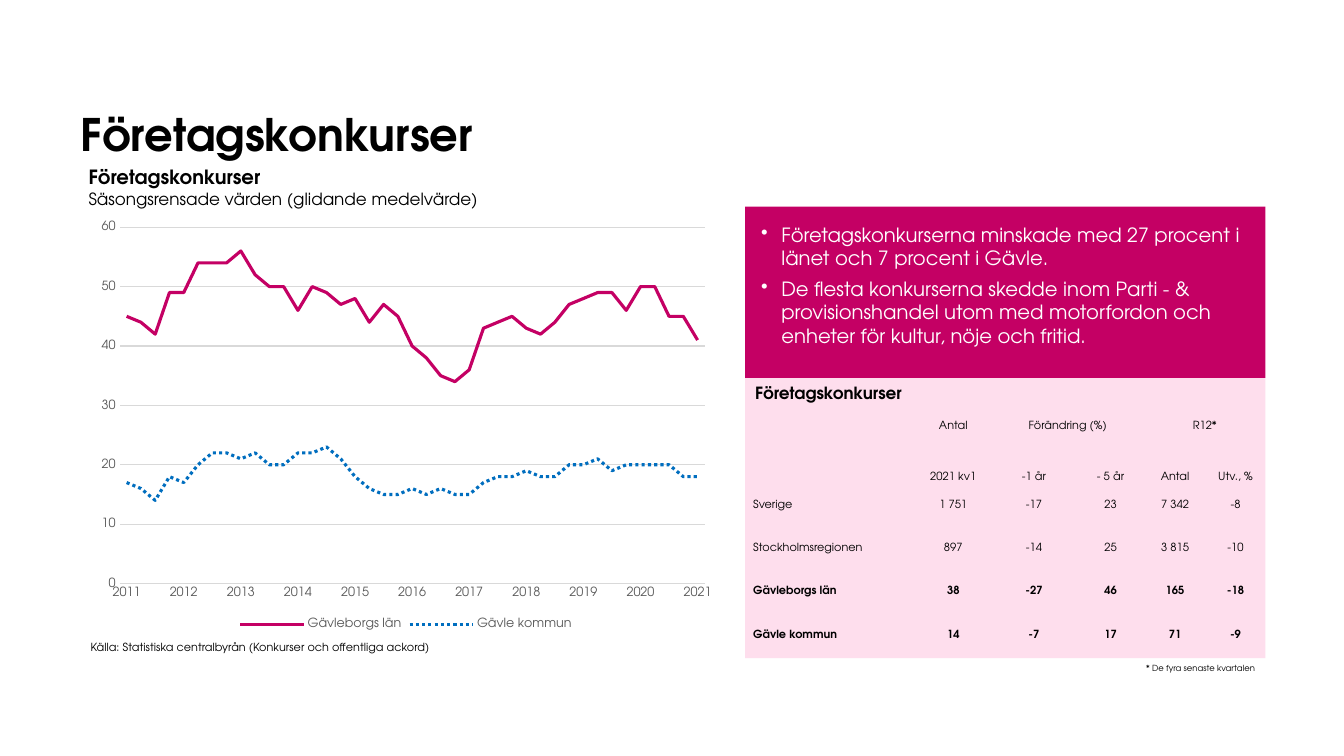
from lxml import etree
from pptx import Presentation
from pptx.chart.data import CategoryChartData
from pptx.dml.color import RGBColor
from pptx.enum.chart import XL_CHART_TYPE as ChartType, XL_LEGEND_POSITION as LegendPos
from pptx.enum.chart import XL_TICK_MARK as TickMark
from pptx.enum.dml import MSO_LINE as Dash
from pptx.enum.shapes import MSO_SHAPE as Shape
from pptx.enum.text import MSO_ANCHOR as Anchor, PP_ALIGN as Align
from pptx.oxml.ns import qn
from pptx.util import Pt

PX = 9144  # 100 px to the inch
FONT = "TeX Gyre Adventor"
COLORS = {"text": "000000", "white": "FFFFFF", "magenta": "C40064", "pink": "FEDEED",
          "blue": "006EBF", "grey": "595959", "grid": "D9D9D9"}
NO_STYLE_TABLE = "{2D5ABB26-0587-4C30-8999-92F81FD0307C}"


def rgb(name):
    return RGBColor.from_string(COLORS[name])


class SlideBuilder:
    def __init__(self, page):
        self.page = page

    def style(self, font, size, color="text", bold=False):
        font.name, font.size, font.bold = FONT, Pt(size), bold
        font.color.rgb = rgb(color)

    def insets(self, target, left, top, right, bottom):
        target.margin_left, target.margin_top = left * PX, top * PX
        target.margin_right, target.margin_bottom = right * PX, bottom * PX

    def text(self, area, lines, wrap=False, margins=(10, 5, 10, 5), anchor=Anchor.TOP):
        """Each line is (wording, size, bold)."""
        frame = self.page.shapes.add_textbox(*(n * PX for n in area)).text_frame
        frame.word_wrap, frame.vertical_anchor = wrap, anchor
        self.insets(frame, *margins)
        for i, (wording, size, bold) in enumerate(lines):
            para = frame.add_paragraph() if i else frame.paragraphs[0]
            para.text = wording
            self.style(para.font, size, bold=bold)

    def panel(self, area, color):
        box = self.page.shapes.add_shape(Shape.RECTANGLE, *(n * PX for n in area))
        box.shadow.inherit = False
        box.fill.solid()
        box.fill.fore_color.rgb = rgb(color)
        box.line.fill.background()
        return box

    def bullets(self, area, color, items, size):
        frame = self.panel(area, color).text_frame
        frame.word_wrap, frame.vertical_anchor = True, Anchor.TOP
        self.insets(frame, 16, 16, 16, 16)
        for i, item in enumerate(items):
            para = frame.add_paragraph() if i else frame.paragraphs[0]
            para.text, para.alignment = item, Align.LEFT
            props = para._p.get_or_add_pPr()
            props.set("marL", str(20 * PX))
            props.set("indent", str(-20 * PX))
            etree.SubElement(props, qn("a:buChar")).set("char", "•")
            if i:
                para.space_before = Pt(5)
            self.style(para.font, size, "white")

    def table(self, area, widths, heights, rows, merges, bold_from, size):
        frame = self.page.shapes.add_table(len(rows), len(widths), *(n * PX for n in area))
        table = frame.table
        table.first_row = table.horz_banding = False
        table._tbl.tblPr.find(qn("a:tableStyleId")).text = NO_STYLE_TABLE
        for column, width in zip(table.columns, widths):
            column.width = width * PX
        for r, (height, row) in enumerate(zip(heights, rows)):
            table.rows[r].height = height * PX
            for c, wording in enumerate(row):
                cell = table.cell(r, c)
                cell.fill.background()
                cell.vertical_anchor = Anchor.BOTTOM if r == 1 else Anchor.MIDDLE
                self.insets(cell, 1 if c else 8, 1, 1, 0)
                para = cell.text_frame.paragraphs[0]
                para.text = wording
                para.alignment = Align.CENTER if c else Align.LEFT
                self.style(para.font, size, bold=r >= bold_from)
        for row, first, last in merges:
            table.cell(row, first).merge(table.cell(row, last))

    def line_chart(self, area, categories, series, label_step, plot):
        """Each series is (name, color, width, dash, values); plot is in chart fractions."""
        data = CategoryChartData(number_format="0")
        data.categories = categories
        for name, *_, values in series:
            data.add_series(name, values)
        chart = self.page.shapes.add_chart(ChartType.LINE, *(n * PX for n in area), data).chart
        self.style(chart.font, 10)
        chart.has_title = False
        chart.has_legend = True
        chart.legend.position = LegendPos.BOTTOM
        chart.legend.include_in_layout = False
        self.style(chart.legend.font, 9, "grey")

        # Axes
        years, values = chart.category_axis, chart.value_axis
        for axis in (years, values):
            axis.major_tick_mark = axis.minor_tick_mark = TickMark.NONE
            self.style(axis.tick_labels.font, 9, "grey")
        values.minimum_scale, values.maximum_scale, values.major_unit = 0, 60, 10
        values.has_major_gridlines = True
        values.format.line.fill.background()
        for line in (years.format.line, values.major_gridlines.format.line):
            line.color.rgb, line.width = rgb("grid"), Pt(0.75)
        skip = etree.Element(qn("c:tickLblSkip"))
        skip.set("val", str(label_step))
        years._element.find(qn("c:noMultiLvlLbl")).addprevious(skip)

        # Lines
        chart.plots[0].vary_by_categories = False
        for drawn, (_, color, width, dash, _) in zip(chart.plots[0].series, series):
            drawn.smooth = False
            line = drawn.format.line
            line.color.rgb, line.width, line.dash_style = rgb(color), Pt(width), dash

        # Plot area
        plot_area = chart._chartSpace.chart.plotArea
        for old in plot_area.findall(qn("c:layout")):
            plot_area.remove(old)
        layout = etree.Element(qn("c:layout"))
        plot_area.insert(0, layout)
        manual = etree.SubElement(layout, qn("c:manualLayout"))
        settings = [("layoutTarget", "inner"), ("xMode", "edge"), ("yMode", "edge"),
                    *zip("xywh", plot)]
        for tag, value in settings:
            etree.SubElement(manual, qn("c:" + tag)).set("val", str(value))


def main():
    deck = Presentation()
    deck.slide_width, deck.slide_height = 1333 * PX, 750 * PX
    slide = SlideBuilder(deck.slides.add_slide(deck.slide_layouts[6]))

    # Headings and source
    slide.text((80, 37, 922, 122), [("Företagskonkurser", 32, True)], wrap=True,
               margins=(0, 0, 0, 0), anchor=Anchor.BOTTOM)
    slide.text((78, 159, 579, 54), [("Företagskonkurser", 14, True),
               ("Säsongsrensade värden (glidande medelvärde)", 12, False)], wrap=True)
    slide.text((80, 630, 366, 24), [
        ("Källa: Statistiska centralbyrån (Konkurser och offentliga ackord)", 8, False)])

    # Bankruptcies over time, by quarter
    quarters = [str(2011 + i // 4) if i % 4 == 0 else "" for i in range(41)]
    county = [45, 44, 42, 49, 49, 54, 54, 54, 56, 52, 50, 50, 46, 50, 49, 47, 48, 44, 47, 45, 40,
              38, 35, 34, 36, 43, 44, 45, 43, 42, 44, 47, 48, 49, 49, 46, 50, 50, 45, 45, 41]
    town = [17, 16, 14, 18, 17, 20, 22, 22, 21, 22, 20, 20, 22, 22, 23, 21, 18, 16, 15, 15, 16,
            15, 16, 15, 15, 17, 18, 18, 19, 18, 18, 20, 20, 21, 19, 20, 20, 20, 20, 18, 18]
    slide.line_chart((87, 213, 631, 416), quarters, [
        ("Gävleborgs län", "magenta", 2.25, Dash.SOLID, county),
        ("Gävle kommun", "blue", 2.25, Dash.ROUND_DOT, town),
    ], label_step=4, plot=(0.05, 0.03, 0.92, 0.85))

    # Key messages
    slide.bullets((739, 205, 516, 170), "magenta", [
        "Företagskonkurserna minskade med 27 procent i länet och 7 procent i Gävle.",
        "De flesta konkurserna skedde inom Parti - & provisionshandel utom med motorfordon "
        "och enheter för kultur, nöje och fritid.",
    ], 14)

    # Table panel
    slide.panel((739, 375, 516, 278), "pink")
    slide.text((739, 375, 169, 30), [("Företagskonkurser", 12, True)])
    slide.table((739, 405, 516, 248), [169, 75, 85, 67, 61, 59], [36, 38] + [43] * 4, [
        ["", "Antal", "Förändring (%)", "", "R12*", ""],
        ["", "2021 kv1", "-1 år", "- 5 år", "Antal", "Utv., %"],
        ["Sverige", "1 751", "-17", "23", "7 342", "-8"],
        ["Stockholmsregionen", "897", "-14", "25", "3 815", "-10"],
        ["Gävleborgs län", "38", "-27", "46", "165", "-18"],
        ["Gävle kommun", "14", "-7", "17", "71", "-9"],
    ], merges=[(0, 2, 3), (0, 4, 5)], bold_from=4, size=8)
    slide.text((1127, 653, 129, 20), [("* De fyra senaste kvartalen", 6, False)])

    deck.save("out.pptx")


if __name__ == "__main__":
    main()
